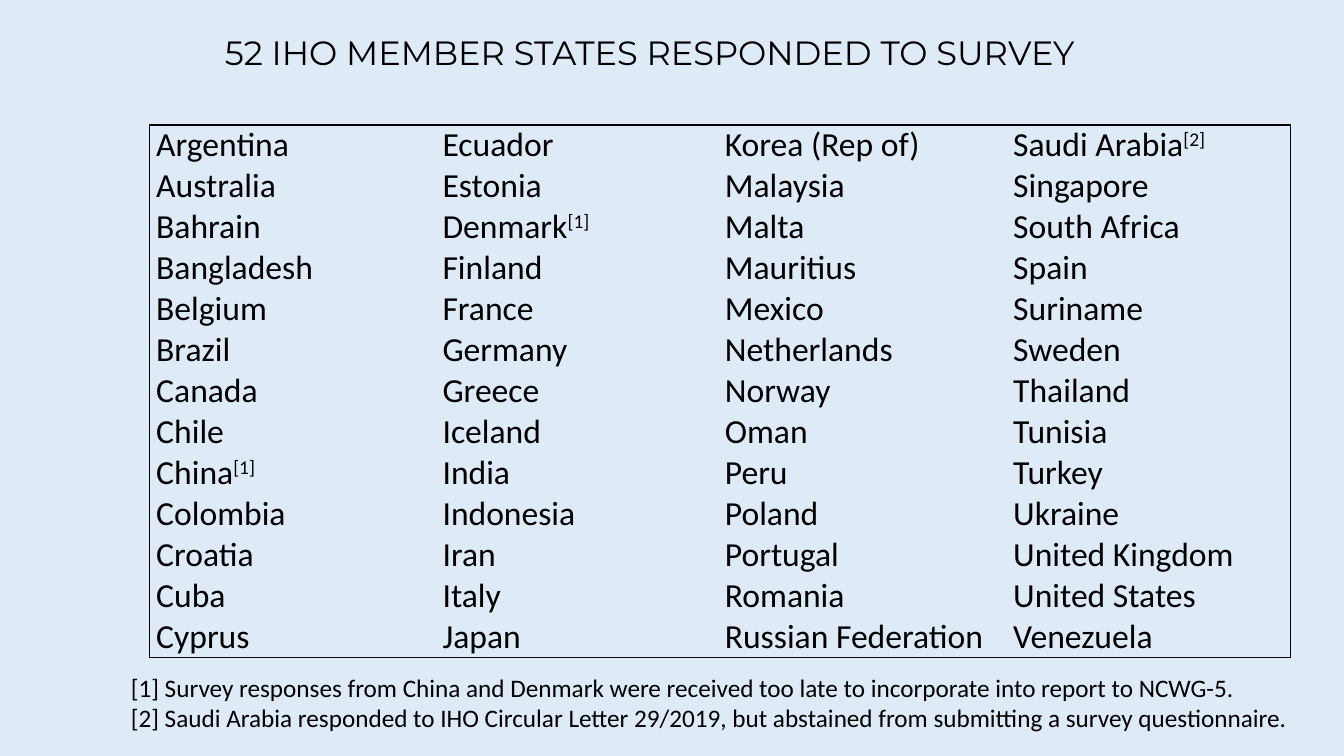
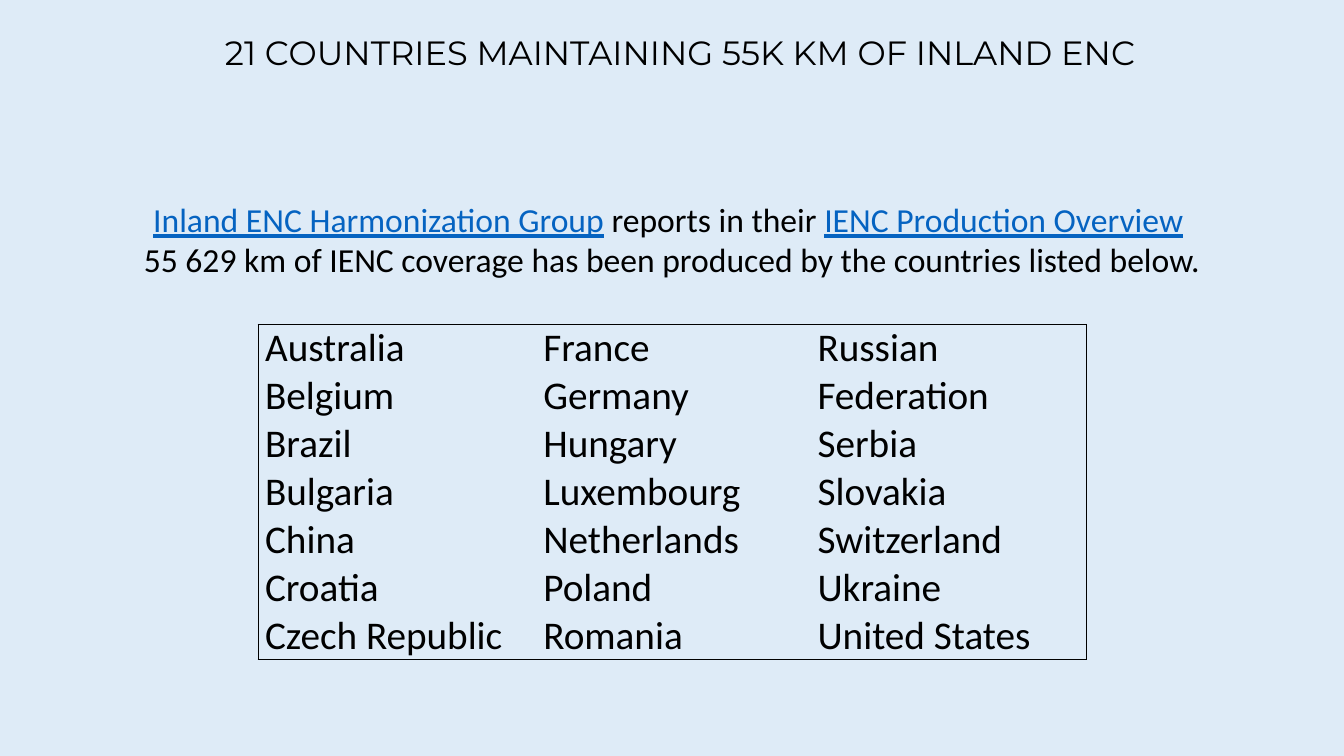
from lxml import etree
from pptx import Presentation
from pptx.dml.color import RGBColor as RGB
from pptx.enum.shapes import MSO_SHAPE as SHAPE
from pptx.enum.text import MSO_ANCHOR as ANCHOR, PP_ALIGN as ALIGN
from pptx.oxml.ns import qn
from pptx.util import Inches, Pt

COLORS = {"bg": "DEEBF7", "text": "000000", "link": "0563C1"}
BODY, HEAD = "Calibri", "Montserrat"
LINE = 1.22  # line height of the body font, in ems

prs = Presentation()
prs.slide_width, prs.slide_height = Inches(13.33), Inches(7.5)
W, H = prs.slide_width, prs.slide_height


def write(tf, lines, size, font=BODY, align=ALIGN.LEFT, spacing=None):
    """Each line is a list of (text, style) runs; style is plain, link or sup."""
    for i, line in enumerate(lines):
        p = tf.paragraphs[0] if i == 0 else tf.add_paragraph()
        p.alignment, p.line_spacing = align, spacing
        for text, style in line:
            r = p.add_run()
            r.text = text
            r.font.size, r.font.name = Pt(size), font
            r.font.color.rgb = RGB.from_string(COLORS["link" if style == "link" else "text"])
            if style == "link":
                r.font.underline = True
            elif style == "sup":
                r._r.get_or_add_rPr().set("baseline", "30000")


def text_box(s, left, top, width, height, anchor=ANCHOR.TOP):
    """Box placed by shares of the slide's size."""
    sp = s.shapes.add_textbox(int(left * W), int(top * H), int(width * W), int(height * H))
    tf = sp.text_frame
    tf.word_wrap, tf.vertical_anchor = True, anchor
    return tf


slides = [
    {
        "title": "52 IHO MEMBER STATES RESPONDED TO SURVEY",
        "at": (1.48, 1.24), "cols": (2.84, 2.8, 2.86, 2.82), "size": 24, "rows": 13,
        "foot": 0.31,
        "countries": [
            ["Argentina", "Australia", "Bahrain", "Bangladesh", "Belgium", "Brazil", "Canada",
             "Chile", "China[1]", "Colombia", "Croatia", "Cuba", "Cyprus"],
            ["Ecuador", "Estonia", "Denmark[1]", "Finland", "France", "Germany", "Greece",
             "Iceland", "India", "Indonesia", "Iran", "Italy", "Japan"],
            ["Korea (Rep of)", "Malaysia", "Malta", "Mauritius", "Mexico", "Netherlands", "Norway",
             "Oman", "Peru", "Poland", "Portugal", "Romania", "Russian Federation"],
            ["Saudi Arabia[2]", "Singapore", "South Africa", "Spain", "Suriname", "Sweden",
             "Thailand", "Tunisia", "Turkey", "Ukraine", "United Kingdom", "United States",
             "Venezuela"],
        ],
        "note": [
            [("[1] Survey responses from China and Denmark were received too late to "
              "incorporate into report to NCWG-5.", "plain")],
            [("[2] Saudi Arabia responded to IHO Circular Letter 29/2019, but abstained "
              "from submitting a survey questionnaire.", "plain")],
        ],
        "note_box": (0.09, 0.883, 0.882, 0.094), "note_size": 18,
        "note_align": ALIGN.LEFT, "note_anchor": ANCHOR.TOP,
    },
    {
        "title": "21 COUNTRIES MAINTAINING 55K KM OF INLAND ENC",
        "at": (2.56, 3.22), "cols": (2.76, 2.72, 2.74), "size": 28, "rows": 7,
        "foot": 0.41,
        "countries": [
            ["Australia", "Belgium", "Brazil", "Bulgaria", "China", "Croatia", "Czech Republic"],
            ["France", "Germany", "Hungary", "Luxembourg", "Netherlands", "Poland", "Romania"],
            ["Russian Federation", "Serbia", "Slovakia", "Switzerland", "Ukraine",
             "United States"],
        ],
        "note": [
            [("Inland ENC Harmonization Group", "link"), (" reports in their ", "plain"),
             ("IENC Production Overview", "link"), (" ", "plain")],
            [("55 629 km of IENC coverage has been produced by the countries listed below.",
              "plain")],
        ],
        "note_box": (0, 0.256, 1, 0.121), "note_size": 24,
        "note_align": ALIGN.CENTER, "note_anchor": ANCHOR.MIDDLE,
    },
]

for d in slides:
    s = prs.slides.add_slide(prs.slide_layouts[6])

    # Background panel
    sp = s.shapes.add_shape(SHAPE.RECTANGLE, 0, 0, W, H)
    sp.shadow.inherit = False
    sp.fill.solid()
    sp.fill.fore_color.rgb = RGB.from_string(COLORS["bg"])
    sp.line.fill.background()

    # Title
    tf = text_box(s, 0.16, 0.007, 0.84, 0.13, ANCHOR.MIDDLE)
    write(tf, [[(d["title"], "plain")]], 24, HEAD, spacing=0.9)

    # Country table: a row of name lists above an empty merged row
    n = len(d["cols"])
    left, top = d["at"]
    heights = Pt(d["rows"] * d["size"] * LINE), Inches(d["foot"])
    table = s.shapes.add_table(2, n, Inches(left), Inches(top),
                               Inches(sum(d["cols"])), sum(heights)).table
    table.first_row = table.horz_banding = False
    for row, height in zip(table.rows, heights):
        row.height = height
    for i, width in enumerate(d["cols"]):
        table.columns[i].width = Inches(width)
    table.cell(1, 0).merge(table.cell(1, n - 1))

    # Frame around the name lists, no inner lines
    for j, row in enumerate(table.rows):
        for i, cell in enumerate(row.cells):
            cell.margin_left = cell.margin_right = Inches(0.07)
            cell.margin_top = cell.margin_bottom = 0
            edges = {"L": j == 0 and i == 0, "R": j == 0 and i == n - 1,
                     "T": True, "B": j == 0}
            tcPr = cell._tc.get_or_add_tcPr()
            for edge, shown in edges.items():
                ln = etree.SubElement(tcPr, qn(f"a:ln{edge}"), w=str(Pt(1)))
                if shown:
                    solid = etree.SubElement(ln, qn("a:solidFill"))
                    etree.SubElement(solid, qn("a:srgbClr"), val=COLORS["text"])
                else:
                    etree.SubElement(ln, qn("a:noFill"))
            cell.fill.background()

    # Names, with their note marks raised
    for i, names in enumerate(d["countries"]):
        lines = []
        for name in names:
            country, mark, number = name.partition("[")
            lines.append([(country, "plain")] + ([(mark + number, "sup")] if mark else []))
        write(table.cell(0, i).text_frame, lines, d["size"])

    # Note
    tf = text_box(s, *d["note_box"], d["note_anchor"])
    write(tf, d["note"], d["note_size"], align=d["note_align"])

prs.save("out.pptx")
